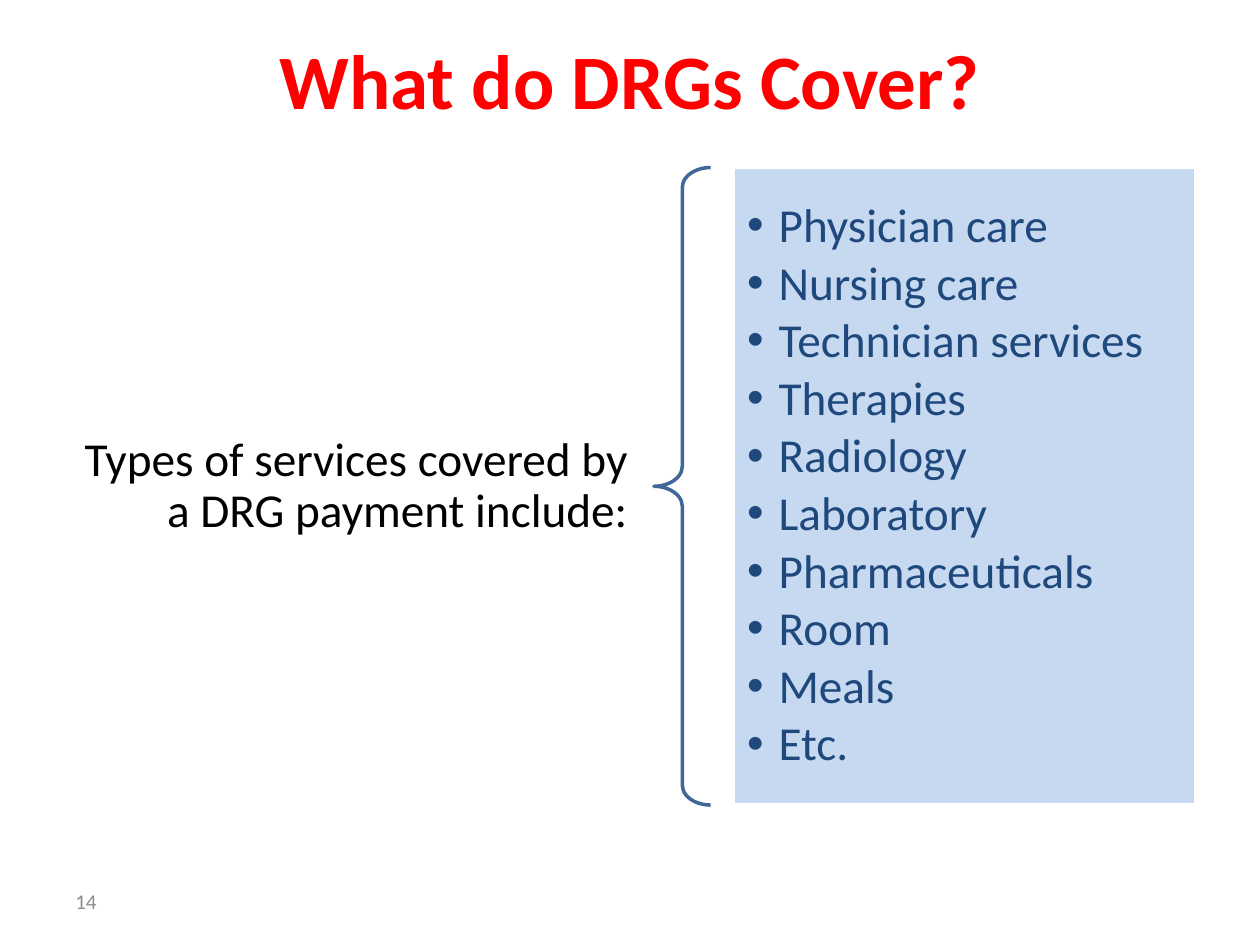
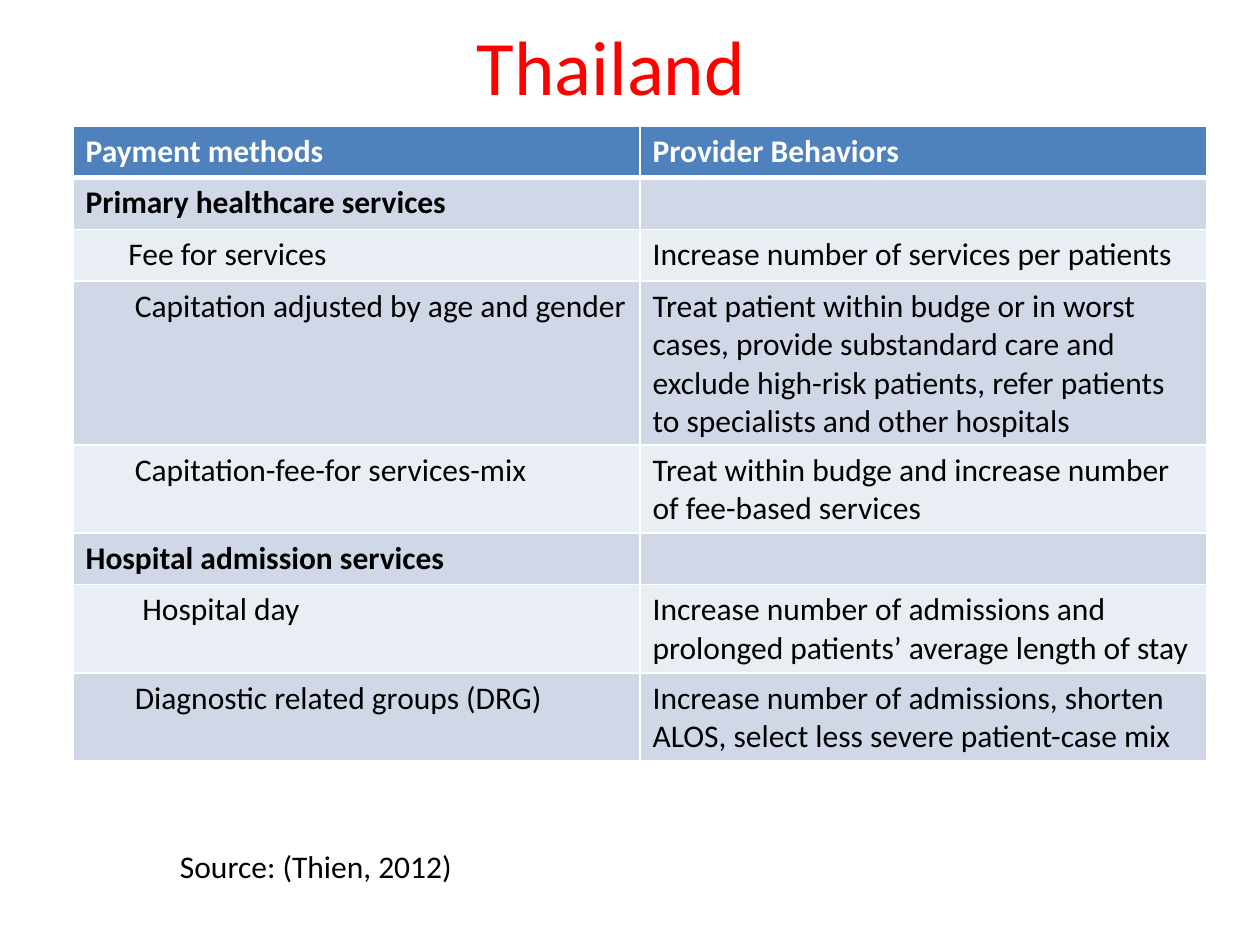
from lxml.etree import SubElement
from pptx import Presentation
from pptx.dml.color import RGBColor
from pptx.enum.shapes import MSO_SHAPE as Shape
from pptx.enum.text import MSO_ANCHOR as Anchor, PP_ALIGN as Align
from pptx.oxml.ns import qn
from pptx.util import Inches, Pt

FONT = "Calibri"
RED = RGBColor(0xFF, 0x00, 0x00)
BLACK = RGBColor(0x00, 0x00, 0x00)
WHITE = RGBColor(0xFF, 0xFF, 0xFF)
GREY = RGBColor(0x8C, 0x8C, 0x8C)
NAVY = RGBColor(0x1F, 0x49, 0x7D)
BRACE_BLUE = RGBColor(0x3F, 0x67, 0x97)
PANEL_BLUE = RGBColor(0xC6, 0xD9, 0xF1)
HEADER_BLUE = RGBColor(0x4F, 0x81, 0xBD)
BANDS = (RGBColor(0xE9, 0xED, 0xF4), RGBColor(0xD0, 0xD8, 0xE8))

COVER_TITLE = "What do DRGs Cover?"
COVER_LEAD = "Types of services covered by a DRG payment include:"
SERVICES = [
    "Physician care", "Nursing care", "Technician services", "Therapies",
    "Radiology", "Laboratory", "Pharmaceuticals", "Room", "Meals", "Etc.",
]
PAGE_NUMBER = "14"

THAILAND_TITLE = "Thailand"
METHODS = [
    ("Payment methods", "Provider Behaviors", 0),
    ("Primary healthcare services", "", 0),
    ("Fee for services", "Increase number of services per patients", 0.34),
    ("Capitation adjusted by age and gender",
     "Treat patient within budge or in worst cases, provide substandard care and "
     "exclude high-risk patients, refer patients to specialists and other hospitals", 0.39),
    ("Capitation-fee-for services-mix",
     "Treat within budge and increase number of fee-based services", 0.39),
    ("Hospital admission services", "", 0),
    ("Hospital day",
     "Increase number of admissions and prolonged patients’ average length of stay", 0.45),
    ("Diagnostic related groups (DRG)",
     "Increase number of admissions, shorten ALOS, select less severe patient-case mix", 0.39),
]
SOURCE = "Source: (Thien, 2012)"

BODY_TOP, BODY_HEIGHT = 1.33, 5.06
CELL_MARGIN = 0.1
ROW_HEIGHT = 0.41
COLUMN_WIDTH = 4.5


def style(paragraph, size, color, bold=False, align=Align.LEFT):
    paragraph.alignment = align
    for run in paragraph.runs:
        run.font.name = FONT
        run.font.size = Pt(size)
        run.font.bold = bold
        run.font.color.rgb = color


def add_text(slide, text, box, size, color, bold=False, align=Align.LEFT,
             anchor=Anchor.MIDDLE, wrap=True):
    frame = slide.shapes.add_textbox(*map(Inches, box)).text_frame
    frame.word_wrap = wrap
    frame.vertical_anchor = anchor
    frame.text = text
    style(frame.paragraphs[0], size, color, bold, align)
    return frame


def add_title(slide, text, box, bold=False):
    add_text(slide, text, box, 44, RED, bold, Align.CENTER)


def add_bullet(paragraph):
    properties = paragraph._p.get_or_add_pPr()
    properties.set("marL", str(Inches(0.25)))
    properties.set("indent", str(-Inches(0.25)))
    SubElement(properties, qn("a:buFont"), typeface="Arial")
    SubElement(properties, qn("a:buChar"), char="•")


def add_borders(cell, is_header):
    properties = cell._tc.get_or_add_tcPr()
    for side in ("lnL", "lnR", "lnT", "lnB"):
        width = 3 if is_header and side == "lnB" else 1
        line = SubElement(properties, qn(f"a:{side}"), w=str(Pt(width)))
        fill = SubElement(line, qn("a:solidFill"))
        SubElement(fill, qn("a:srgbClr"), val=str(WHITE))


def build_cover(slide):
    add_title(slide, COVER_TITLE, (0.5, 0, 9, 1.25), bold=True)
    add_text(slide, PAGE_NUMBER, (0.5, 6.95, 2.33, 0.4), 12, GREY)

    lead = add_text(slide, COVER_LEAD, (0.34, 3.37, 4.85, 0.99), 27, BLACK, align=Align.RIGHT)
    lead.margin_left = lead.margin_right = Inches(0.21)
    lead.margin_top = lead.margin_bottom = Inches(0.07)
    lead.paragraphs[0].line_spacing = 0.9

    brace = slide.shapes.add_shape(
        Shape.LEFT_BRACE, *map(Inches, (5.19, BODY_TOP, 0.45, BODY_HEIGHT)))
    brace.shadow.inherit = False
    brace.adjustments[0] = 0.35
    brace.fill.background()
    brace.line.color.rgb = BRACE_BLUE
    brace.line.width = Pt(2)

    panel = slide.shapes.add_shape(
        Shape.RECTANGLE, *map(Inches, (5.82, BODY_TOP, 3.67, BODY_HEIGHT)))
    panel.shadow.inherit = False
    panel.fill.solid()
    panel.fill.fore_color.rgb = PANEL_BLUE
    panel.line.color.rgb = WHITE
    panel.line.width = Pt(2)
    services = panel.text_frame
    services.word_wrap = True
    services.vertical_anchor = Anchor.MIDDLE
    services.margin_left = services.margin_right = Inches(0.11)
    services.margin_top = services.margin_bottom = Inches(0.11)
    services.text = "\n".join(SERVICES)
    for service in services.paragraphs:
        add_bullet(service)
        service.line_spacing = 0.9
        service.space_after = Pt(3.7)
        style(service, 27, NAVY)


def build_thailand(slide):
    add_title(slide, THAILAND_TITLE, (0.35, 0.02, 9, 0.98))
    methods = slide.shapes.add_table(
        len(METHODS), 2, Inches(0.58), Inches(1),
        Inches(2 * COLUMN_WIDTH), Inches(ROW_HEIGHT * len(METHODS))).table
    for row, (method, behavior, indent) in enumerate(METHODS):
        methods.rows[row].height = Inches(ROW_HEIGHT)
        is_header = row == 0
        is_heading = not behavior
        for column, text in enumerate((method, behavior)):
            cell = methods.cell(row, column)
            cell.text = text
            cell.margin_left = Inches(CELL_MARGIN + (0 if column else indent))
            add_borders(cell, is_header)
            cell.fill.solid()
            cell.fill.fore_color.rgb = HEADER_BLUE if is_header else BANDS[row % 2]
            style(cell.text_frame.paragraphs[0], 18, WHITE if is_header else BLACK,
                  is_header or is_heading)
    add_text(slide, SOURCE, (1.33, 6.67, 2.39, 0.4), 18, BLACK, anchor=Anchor.TOP, wrap=False)


def main():
    deck = Presentation()
    deck.slide_width, deck.slide_height = Inches(10), Inches(7.5)
    blank = deck.slide_layouts[6]
    for build in (build_cover, build_thailand):
        build(deck.slides.add_slide(blank))
    deck.save("out.pptx")


if __name__ == "__main__":
    main()
